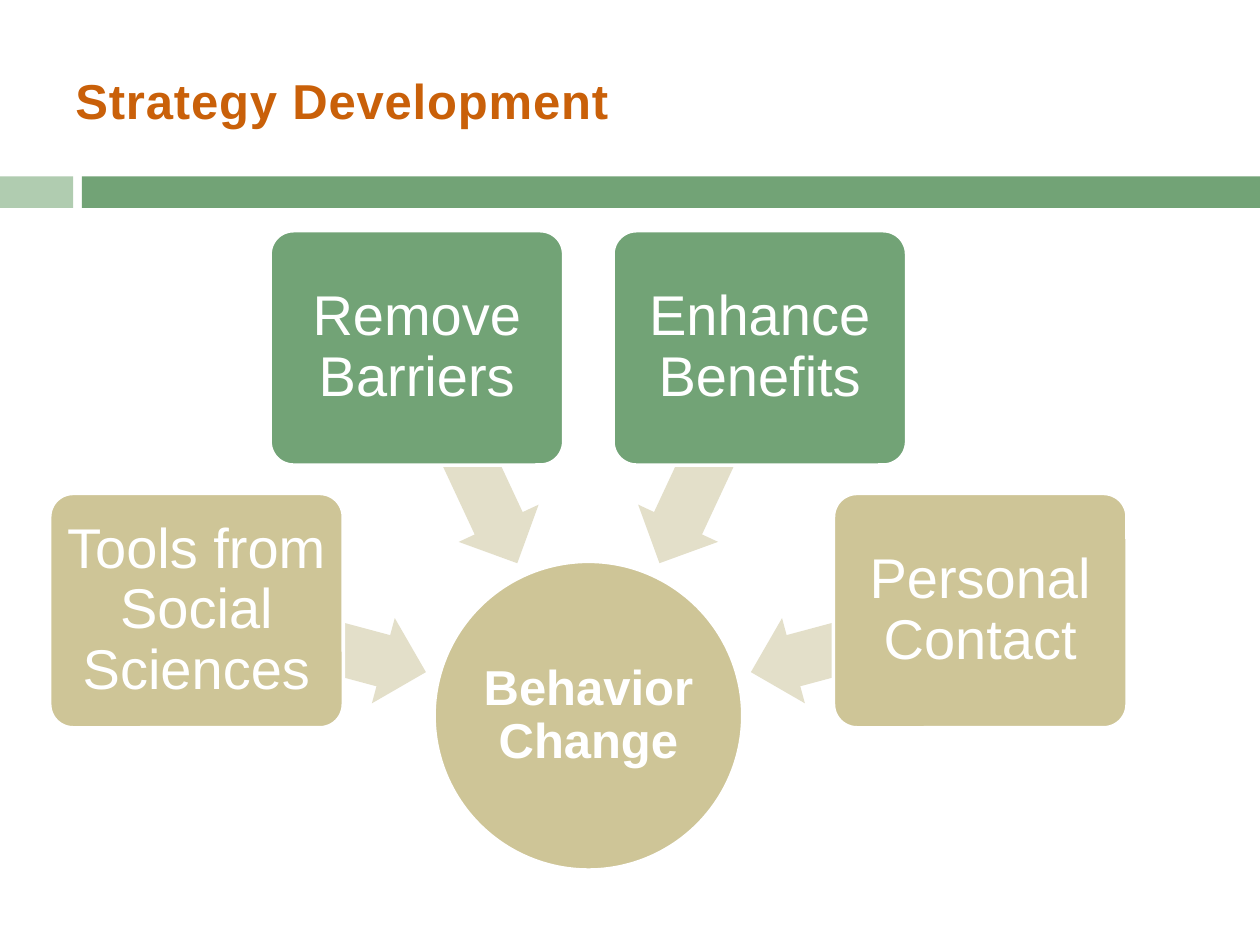
from math import cos, radians, sin

from pptx import Presentation
from pptx.dml.color import RGBColor
from pptx.enum.shapes import MSO_SHAPE
from pptx.enum.text import MSO_ANCHOR, PP_ALIGN
from pptx.util import Inches, Pt

RECTANGLE = MSO_SHAPE.RECTANGLE
ROUNDED = MSO_SHAPE.ROUNDED_RECTANGLE
OVAL = MSO_SHAPE.OVAL
LEFT_ARROW = MSO_SHAPE.LEFT_ARROW
MIDDLE = MSO_ANCHOR.MIDDLE
LEFT, CENTER = PP_ALIGN.LEFT, PP_ALIGN.CENTER

WHITE = RGBColor(0xFF, 0xFF, 0xFF)
ORANGE = RGBColor(0xC9, 0x60, 0x09)
GREEN = RGBColor(0x72, 0xA3, 0x76)
PALE_GREEN = RGBColor(0xB0, 0xCC, 0xB0)
TAN = RGBColor(0xCE, 0xC5, 0x97)
PALE_TAN = RGBColor(0xE3, 0xDF, 0xC9)

FONT = "Arial"
SLIDE_WIDTH, SLIDE_HEIGHT = 10, 7.5

# The diagram is radial: every part sits at an angle and radius from the hub
HUB_X, HUB_Y, HUB_SIZE = 4.67, 5.68, 2.45
BOX_RADIUS, BOX_WIDTH, BOX_HEIGHT = 3.22, 2.33, 1.86
ARROW_RADIUS, ARROW_WIDTH, ARROW_HEIGHT = 2.28, 1.89, 0.7
FIRST_ANGLE, ANGLE_STEP = 195, 50
INPUTS = [
    ("Tools from Social Sciences", TAN),
    ("Remove Barriers", GREEN),
    ("Enhance Benefits", GREEN),
    ("Personal Contact", TAN),
]


def add_block(page, kind, left, top, width, height, fill, outline=False):
    block = page.shapes.add_shape(
        kind, Inches(left), Inches(top), Inches(width), Inches(height))
    block.shadow.inherit = False
    block.fill.solid()
    block.fill.fore_color.rgb = fill
    if outline:
        block.line.color.rgb = WHITE
        block.line.width = Pt(2)
    else:
        block.line.fill.background()
    return block


def add_centred(page, kind, x, y, width, height, fill, outline=False):
    return add_block(page, kind, x - width / 2, y - height / 2,
                     width, height, fill, outline)


def write_text(box, text, size, color=WHITE, bold=False, align=CENTER,
               inset=0.07, line_spacing=0.9, tracking=0):
    frame = box.text_frame
    frame.word_wrap = True
    frame.vertical_anchor = MIDDLE
    frame.margin_left = frame.margin_right = Inches(inset)
    frame.margin_top = frame.margin_bottom = Inches(inset)
    para = frame.paragraphs[0]
    para.alignment = align
    para.line_spacing = line_spacing
    span = para.add_run()
    span.text = text
    span.font.name = FONT
    span.font.size = Pt(size)
    span.font.bold = bold
    span.font.color.rgb = color
    if tracking:
        span._r.get_or_add_rPr().set("spc", str(int(tracking * 100)))


def around_hub(angle, radius):
    turn = radians(angle)
    return HUB_X + radius * cos(turn), HUB_Y + radius * sin(turn)


def add_header(page):
    add_block(page, RECTANGLE, 0, 1.4, 0.58, 0.25, PALE_GREEN)
    add_block(page, RECTANGLE, 0.65, 1.4, SLIDE_WIDTH - 0.65, 0.25, GREEN)
    title = page.shapes.add_textbox(
        Inches(0.5), Inches(0.42), Inches(SLIDE_WIDTH * 0.9), Inches(SLIDE_HEIGHT * 0.1))
    write_text(title, "Strategy Development", 28, color=ORANGE, bold=True,
               align=LEFT, inset=0.1, line_spacing=1, tracking=0.5)


def add_hub(page):
    hub = add_centred(page, OVAL, HUB_X, HUB_Y, HUB_SIZE, HUB_SIZE, TAN, outline=True)
    write_text(hub, "Behavior Change", 28, bold=True, inset=0.02)


def add_input(page, text, fill, angle):
    # Arrow first, so that the box covers its tail
    arrow = add_centred(page, LEFT_ARROW, *around_hub(angle, ARROW_RADIUS),
                        ARROW_WIDTH, ARROW_HEIGHT, PALE_TAN)
    arrow.adjustments[0] = 0.6
    arrow.adjustments[1] = 0.5
    arrow.rotation = angle
    box = add_centred(page, ROUNDED, *around_hub(angle, BOX_RADIUS),
                      BOX_WIDTH, BOX_HEIGHT, fill, outline=True)
    box.adjustments[0] = 0.1
    write_text(box, text, 32)


def main():
    deck = Presentation()
    deck.slide_width = Inches(SLIDE_WIDTH)
    deck.slide_height = Inches(SLIDE_HEIGHT)
    page = deck.slides.add_slide(deck.slide_layouts[6])

    add_header(page)
    add_hub(page)
    for index, (text, fill) in enumerate(INPUTS):
        add_input(page, text, fill, FIRST_ANGLE + index * ANGLE_STEP)

    deck.save("out.pptx")


if __name__ == "__main__":
    main()
